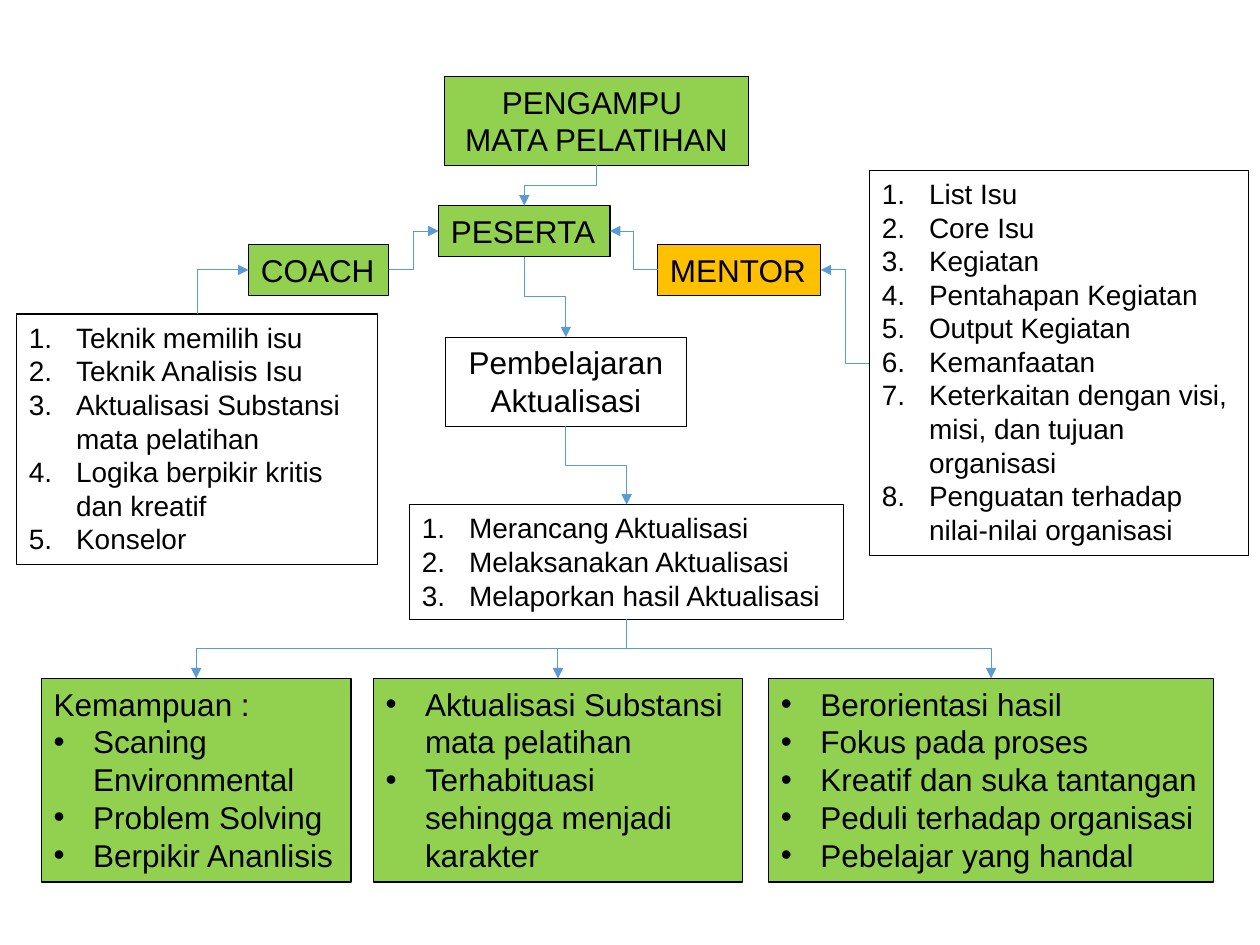
from lxml.etree import SubElement
from pptx import Presentation
from pptx.dml.color import RGBColor
from pptx.enum.shapes import MSO_CONNECTOR
from pptx.enum.text import MSO_AUTO_SIZE, PP_ALIGN
from pptx.oxml.ns import qn
from pptx.util import Pt

FONT = "Arial"
BLACK, GREEN, AMBER, BLUE = "000000", "92D050", "FFC000", "5B9BD5"
TOP, LEFT, BOTTOM, RIGHT = range(4)
NUMBER = ("a:buAutoNum", {"type": "arabicPeriod"}, 27)
BULLET = ("a:buChar", {"char": "•"}, 22.5)


def color(hex_code):
    return RGBColor.from_string(hex_code)


def add_marker(paragraph, marker):
    tag, attributes, indent = marker
    properties = paragraph._p.get_or_add_pPr()
    properties.set("marL", str(Pt(indent)))
    properties.set("indent", str(-Pt(indent)))
    SubElement(properties, qn("a:buFont"), typeface=FONT)
    SubElement(properties, qn(tag), attributes)


def add_box(slide, bounds, lines, fill=None, size=18, align=PP_ALIGN.LEFT, wrap=True):
    box = slide.shapes.add_textbox(*map(Pt, bounds))
    if fill:
        box.fill.solid()
        box.fill.fore_color.rgb = color(fill)
    box.line.color.rgb = color(BLACK)
    box.line.width = Pt(0.75)
    frame = box.text_frame
    frame.text = "\n".join(lines)
    frame.word_wrap = wrap
    frame.auto_size = MSO_AUTO_SIZE.SHAPE_TO_FIT_TEXT
    for paragraph in frame.paragraphs:
        paragraph.alignment = align
        for run in paragraph.runs:
            run.font.name = FONT
            run.font.size = Pt(size)
            run.font.color.rgb = color(BLACK)
    return box


def add_list(slide, bounds, items, marker, fill=None, size=18, heading=None, wrap=True):
    lines = [heading, *items] if heading else items
    box = add_box(slide, bounds, lines, fill, size, wrap=wrap)
    for paragraph in box.text_frame.paragraphs[len(lines) - len(items):]:
        add_marker(paragraph, marker)
    return box


def turn(connector, rotation, flip_h, flip_v):
    middle_x = (connector.begin_x + connector.end_x) // 2
    middle_y = (connector.begin_y + connector.end_y) // 2
    width, height = connector.height, connector.width
    connector.left, connector.top = middle_x - width // 2, middle_y - height // 2
    connector.width, connector.height = width, height
    transform = connector._element.spPr.find(qn("a:xfrm"))
    transform.set("rot", str(rotation * 60000))
    transform.set("flipH", str(int(flip_h)))
    transform.set("flipV", str(int(flip_v)))


def add_elbow(slide, source, source_side, target, target_side):
    connector = slide.shapes.add_connector(MSO_CONNECTOR.ELBOW, 0, 0, 0, 0)
    connector.begin_connect(source, source_side)
    connector.end_connect(target, target_side)
    properties = connector._element.spPr
    if (source_side, target_side) == (BOTTOM, TOP):
        rightward = connector.end_x > connector.begin_x
        turn(connector, 270 if rightward else 90, rightward, False)
    elif (source_side, target_side) == (TOP, LEFT):
        properties.find(qn("a:prstGeom")).set("prst", "bentConnector2")
        turn(connector, 90, True, True)
    connector.line.color.rgb = color(BLUE)
    connector.line.width = Pt(0.5)
    SubElement(connector.line._get_or_add_ln(), qn("a:tailEnd"), type="triangle")
    SubElement(properties, qn("a:effectLst"))


def main():
    presentation = Presentation()
    presentation.slide_width, presentation.slide_height = Pt(720), Pt(540)
    slide = presentation.slides.add_slide(presentation.slide_layouts[6])

    lecturers = add_box(slide, (254, 43.7, 173.7, 50.9), ["PENGAMPU ", "MATA PELATIHAN"],
                        GREEN, align=PP_ALIGN.CENTER)
    participants = add_box(slide, (250.6, 117.5, 98, 29.1), ["PESERTA"], GREEN, wrap=False)
    coach = add_box(slide, (142, 139.7, 80, 29.1), ["COACH"], GREEN, wrap=False)
    mentor = add_box(slide, (375.8, 139.7, 93.2, 29.1), ["MENTOR"], AMBER, wrap=False)
    learning = add_box(slide, (254.4, 192.7, 138, 50.9), ["Pembelajaran Aktualisasi"],
                       align=PP_ALIGN.CENTER)

    coach_tasks = add_list(slide, (9.4, 179.5, 206.5, 143), [
        "Teknik memilih isu", "Teknik Analisis Isu",
        "Aktualisasi Substansi mata pelatihan",
        "Logika berpikir kritis dan kreatif", "Konselor"], NUMBER, size=16)
    mentor_tasks = add_list(slide, (496.8, 97.3, 216.7, 220.3), [
        "List Isu", "Core Isu", "Kegiatan", "Pentahapan Kegiatan",
        "Output Kegiatan", "Kemanfaatan",
        "Keterkaitan dengan visi, misi, dan tujuan organisasi",
        "Penguatan terhadap nilai-nilai organisasi"], NUMBER, size=16)
    stages = add_list(slide, (234, 288.4, 248.2, 65.5), [
        "Merancang Aktualisasi", "Melaksanakan Aktualisasi",
        "Melaporkan hasil Aktualisasi"], NUMBER, size=16)

    outcome_top, outcome_height = 387.7, 116.3
    skills = add_list(slide, (23.6, outcome_top, 176.9, outcome_height), [
        "Scaning Environmental", "Problem Solving", "Berpikir Ananlisis"],
        BULLET, GREEN, heading="Kemampuan :")
    habits = add_list(slide, (213.3, outcome_top, 211, outcome_height), [
        "Aktualisasi Substansi mata pelatihan",
        "Terhabituasi sehingga menjadi karakter"], BULLET, GREEN)
    attitudes = add_list(slide, (439.2, outcome_top, 254.2, outcome_height), [
        "Berorientasi hasil", "Fokus pada proses", "Kreatif dan suka tantangan",
        "Peduli terhadap organisasi", "Pebelajar yang handal"],
        BULLET, GREEN, wrap=False)

    add_elbow(slide, coach_tasks, TOP, coach, LEFT)
    add_elbow(slide, coach, RIGHT, participants, LEFT)
    add_elbow(slide, mentor_tasks, LEFT, mentor, RIGHT)
    add_elbow(slide, mentor, LEFT, participants, RIGHT)
    flow = [lecturers, participants, learning, stages]
    for source, target in zip(flow, flow[1:]):
        add_elbow(slide, source, BOTTOM, target, TOP)
    for outcome in (skills, attitudes, habits):
        add_elbow(slide, stages, BOTTOM, outcome, TOP)

    presentation.save("out.pptx")


if __name__ == "__main__":
    main()
